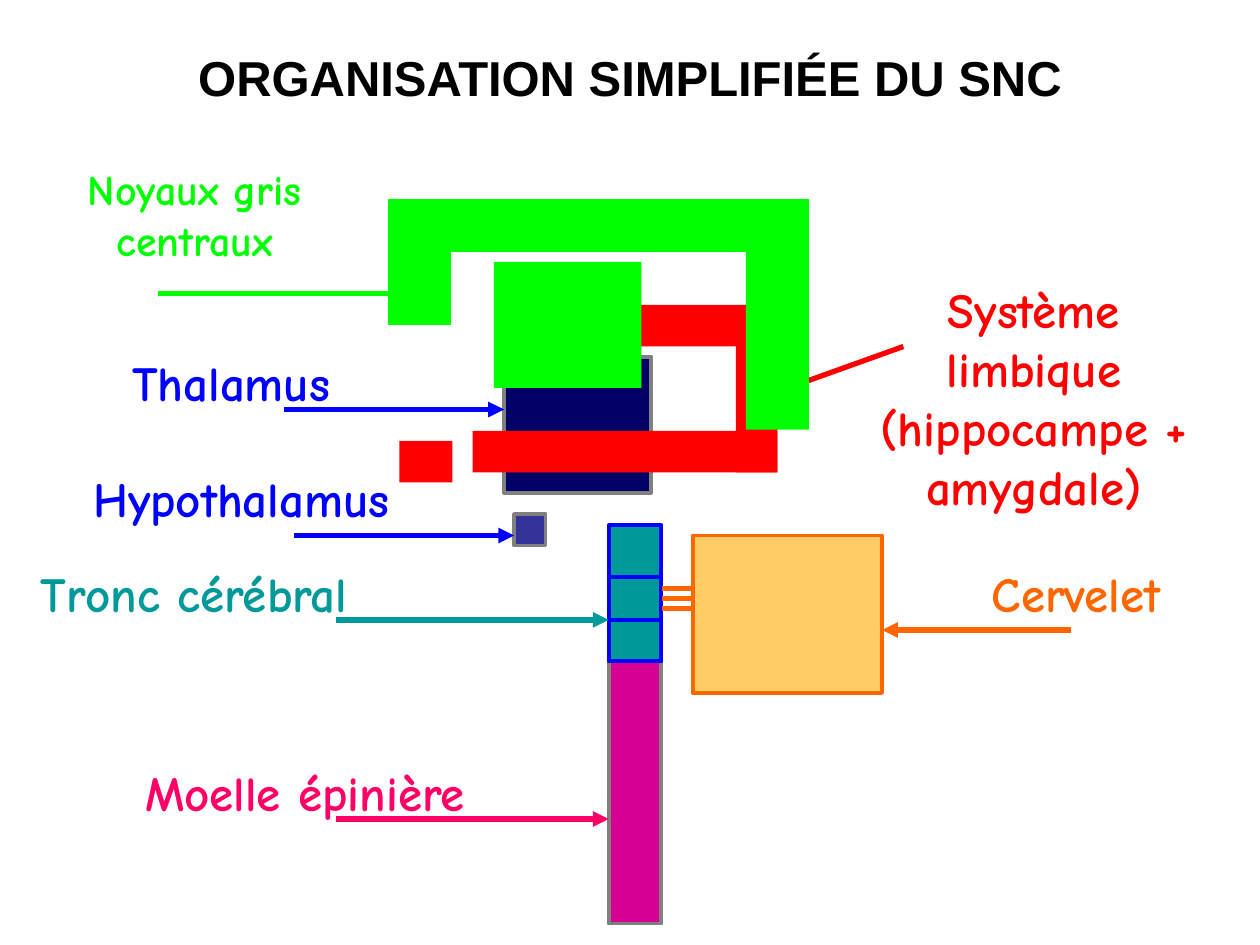
"""Build a slide showing the simplified organisation of the central nervous system."""
from lxml import etree
from pptx import Presentation
from pptx import util as u
from pptx.dml.color import RGBColor
from pptx.enum import shapes, text
from pptx.oxml.ns import qn

BLACK = RGBColor(0x00, 0x00, 0x00)
GREY = RGBColor(0x80, 0x80, 0x80)
MAGENTA = RGBColor(0xD6, 0x00, 0x93)
PINK = RGBColor(0xFF, 0x00, 0x66)
TEAL = RGBColor(0x00, 0x99, 0x99)
BLUE = RGBColor(0x00, 0x00, 0xFF)
NAVY = RGBColor(0x00, 0x00, 0x66)
INDIGO = RGBColor(0x33, 0x33, 0x99)
SAND = RGBColor(0xFF, 0xCC, 0x66)
ORANGE = RGBColor(0xFF, 0x66, 0x00)
RED = RGBColor(0xFF, 0x00, 0x00)
GREEN = RGBColor(0x00, 0xFF, 0x00)

TITLE = "ORGANISATION SIMPLIFIÉE DU SNC"
TITLE_BOX = (0, 0.33, 10, 0.57)
LABEL_FONT = "Comic Neue"

STRUCTURES = [
    dict(label="Moelle épinière", box=(0.42, 6, 4, 0.57), color=PINK,
         fill=MAGENTA, outline=GREY, blocks=[(4.83, 5.25, 0.42, 2.08)],
         arrow=(2.67, 6.5, 4.83, 6.5)),
    dict(label="Tronc cérébral", box=(0, 4.42, 3.08, 0.57), color=TEAL,
         fill=TEAL, outline=BLUE, blocks=[(4.83, 4.17, 0.42, 1.08)],
         bars=dict(span=(4.83, 5.25), rows=(4.58, 4.92), width=2.25),
         arrow=(2.67, 4.92, 4.83, 4.92)),
    dict(label="Cervelet", box=(7.25, 4.42, 2.58, 0.57), color=ORANGE,
         fill=SAND, outline=ORANGE, blocks=[(5.5, 4.25, 1.5, 1.25)],
         bars=dict(span=(5.25, 5.5), rows=(4.67, 4.75, 4.83), width=3),
         arrow=(8.5, 5, 7, 5)),
    dict(label="Thalamus", box=(0, 2.75, 3.67, 0.57), color=BLUE,
         fill=NAVY, outline=GREY, blocks=[(4, 2.83, 1.17, 1.08)],
         arrow=(2.25, 3.25, 4, 3.25)),
    dict(label="Hypothalamus", box=(0.08, 3.67, 3.67, 0.57), color=BLUE,
         fill=INDIGO, outline=GREY, blocks=[(4.08, 4.08, 0.25, 0.25)],
         arrow=(2.33, 4.25, 4.08, 4.25)),
    dict(label="Système limbique (hippocampe + amygdale)",
         box=(6.83, 2.17, 2.75, 1.97), color=RED, fill=RED,
         blocks=[(3.75, 3.42, 2.42, 0.33), (5.84, 2.54, 0.33, 1.21),
                 (4.92, 2.42, 1.25, 0.33), (3.17, 3.5, 0.42, 0.33)],
         arrow=(7.17, 2.75, 6.25, 3.08)),
    dict(label="Noyaux gris centraux", box=(0.17, 1.25, 2.75, 0.9), size=24,
         color=GREEN, fill=GREEN,
         blocks=[(3.92, 2.08, 1.17, 1), (3.08, 1.58, 0.5, 1),
                 (3.17, 1.58, 3.17, 0.42), (5.92, 1.58, 0.5, 1.83)],
         arrow=(1.25, 2.33, 3.25, 2.33)),
]


def inches(values):
    return [u.Inches(value) for value in values]


def write_text(shape, words, font_name, size, color):
    frame = shape.text_frame
    frame.text = words
    frame.word_wrap = True
    frame.auto_size = text.MSO_AUTO_SIZE.SHAPE_TO_FIT_TEXT
    frame.vertical_anchor = text.MSO_ANCHOR.TOP
    paragraph = frame.paragraphs[0]
    paragraph.alignment = text.PP_ALIGN.CENTER
    font = paragraph.font
    font.name, font.size, font.bold = font_name, u.Pt(size), True
    font.color.rgb = color


def add_block(slide, box, fill, outline):
    shape = slide.shapes.add_shape(shapes.MSO_SHAPE.RECTANGLE, *inches(box))
    shape.shadow.inherit = False
    shape.fill.solid()
    shape.fill.fore_color.rgb = fill
    if outline is None:
        shape.line.fill.background()
    else:
        shape.line.color.rgb = outline
        shape.line.width = u.Pt(2.25)


def add_line(slide, ends, color, width, arrow=False):
    connector = slide.shapes.add_connector(shapes.MSO_CONNECTOR.STRAIGHT, *inches(ends))
    connector.line.color.rgb = color
    connector.line.width = u.Pt(width)
    properties = connector.element.spPr
    if arrow:
        etree.SubElement(properties.find(qn("a:ln")), qn("a:tailEnd"), type="triangle")
    etree.SubElement(properties, qn("a:effectLst"))


def add_structure(slide, structure):
    outline = structure.get("outline")
    for block in structure["blocks"]:
        add_block(slide, block, structure["fill"], outline)
    if "bars" in structure:
        bars = structure["bars"]
        left, right = bars["span"]
        for row in bars["rows"]:
            add_line(slide, (left, row, right, row), outline, bars["width"])
    label = slide.shapes.add_textbox(*inches(structure["box"]))
    write_text(label, structure["label"], LABEL_FONT, structure.get("size", 28),
               structure["color"])
    add_line(slide, structure["arrow"], structure["color"], 3, arrow=True)


def main():
    presentation = Presentation()
    presentation.slide_width, presentation.slide_height = inches((10, 7.5))
    slide = presentation.slides.add_slide(presentation.slide_layouts[5])
    title = slide.shapes.title
    title.left, title.top, title.width, title.height = inches(TITLE_BOX)
    write_text(title, TITLE, "Arial", 28, BLACK)
    for structure in STRUCTURES:
        add_structure(slide, structure)
    presentation.save("out.pptx")


if __name__ == "__main__":
    main()
